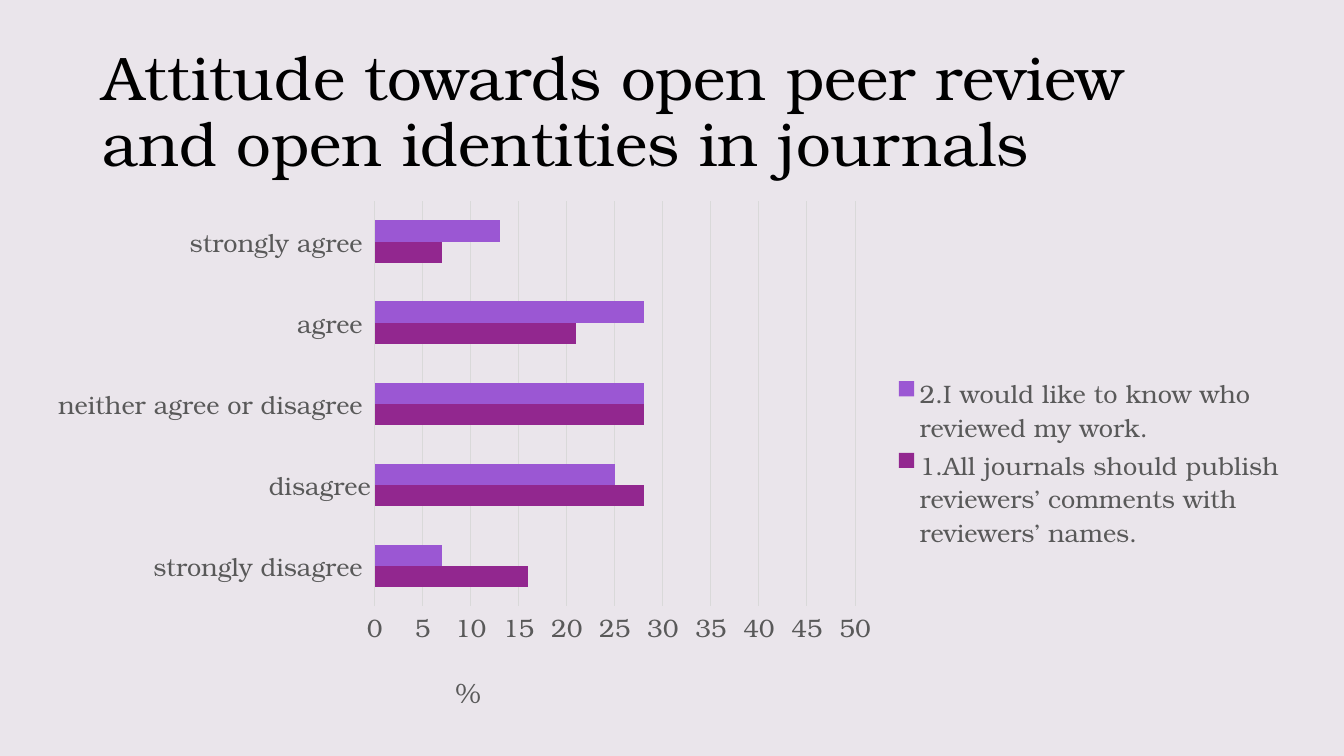
from lxml import etree
from pptx import Presentation
from pptx.chart.data import CategoryChartData
from pptx.dml.color import RGBColor
from pptx.enum.chart import XL_CHART_TYPE, XL_LEGEND_POSITION, XL_TICK_MARK
from pptx.enum.text import MSO_ANCHOR
from pptx.oxml.ns import qn
from pptx.util import Inches, Pt

BAR_CLUSTERED = XL_CHART_TYPE.BAR_CLUSTERED
LEGEND_RIGHT = XL_LEGEND_POSITION.RIGHT
NO_TICK = XL_TICK_MARK.NONE
MIDDLE = MSO_ANCHOR.MIDDLE

BACKGROUND = RGBColor(0xEA, 0xE5, 0xEB)
BLACK = RGBColor(0x00, 0x00, 0x00)
GRAY = RGBColor(0x59, 0x59, 0x59)
GRID = RGBColor(0xD9, 0xD9, 0xD9)
PLUM = RGBColor(0x92, 0x27, 0x8F)
VIOLET = RGBColor(0x9B, 0x57, 0xD3)

CATEGORIES = ["strongly disagree ", "disagree", "neither agree or disagree ",
              " agree ", "strongly agree "]
SERIES = [
    ("1.All journals should publish reviewers’ comments with reviewers’ names.",
     (16, 28, 28, 21, 7), PLUM),
    ("2.I would like to know who reviewed my work.",
     (7, 25, 28, 28, 13), VIOLET),
]


def style_font(font, size, color=GRAY, name="TeX Gyre Bonum"):
    font.name = name
    font.size = Pt(size)
    font.bold = False
    font.color.rgb = color


def write_text(tf, text, size=18, color=GRAY, spacing=None):
    p = tf.paragraphs[0]
    if spacing:
        p.line_spacing = spacing
    r = p.add_run()
    r.text = text
    style_font(r.font, size, color)


def style_line(line, color=GRID, width=0.75):
    line.color.rgb = color
    line.width = Pt(width)


def place(element, index, inner=False, **box):
    for old in element.findall(qn("c:layout")):
        element.remove(old)
    layout = etree.Element(qn("c:layout"))
    manual = etree.SubElement(layout, qn("c:manualLayout"))
    if inner:
        etree.SubElement(manual, qn("c:layoutTarget")).set("val", "inner")
    for mode in ("xMode", "yMode"):
        etree.SubElement(manual, qn(f"c:{mode}")).set("val", "edge")
    for key, value in box.items():
        etree.SubElement(manual, qn(f"c:{key}")).set("val", str(value))
    element.insert(index, layout)


class SlideBuilder:
    def __init__(self, prs):
        self.s = prs.slides.add_slide(prs.slide_layouts[6])
        fill = self.s.background.fill
        fill.solid()
        fill.fore_color.rgb = BACKGROUND

    def title(self, text, left, top, width, height):
        sp = self.s.shapes.add_textbox(
            Inches(left), Inches(top), Inches(width), Inches(height))
        tf = sp.text_frame
        tf.word_wrap = True
        tf.vertical_anchor = MIDDLE
        write_text(tf, text, size=44, color=BLACK, spacing=0.9)

    def bar_chart(self, left, top, width, height):
        data = CategoryChartData()
        data.categories = CATEGORIES
        for name, values, _ in SERIES:
            data.add_series(name, values)
        chart = self.s.shapes.add_chart(
            BAR_CLUSTERED, Inches(left), Inches(top),
            Inches(width), Inches(height), data).chart
        style_font(chart.font, 10, BLACK)
        chart.has_title = False

        plot = chart.plots[0]
        plot.gap_width = 182
        plot.overlap = 0
        plot.vary_by_categories = False
        for series, (_, _, color) in zip(plot.series, SERIES):
            series.format.fill.solid()
            series.format.fill.fore_color.rgb = color

        for axis in (chart.category_axis, chart.value_axis):
            axis.major_tick_mark = axis.minor_tick_mark = NO_TICK
            style_font(axis.tick_labels.font, 18)
        chart.category_axis.has_major_gridlines = False
        style_line(chart.category_axis.format.line)

        percent = chart.value_axis
        percent.minimum_scale = 0
        percent.maximum_scale = 50
        percent.major_unit = 5
        percent.format.line.fill.background()
        percent.has_major_gridlines = True
        style_line(percent.major_gridlines.format.line)
        percent.has_title = True
        write_text(percent.axis_title.text_frame, "%", size=20)

        chart.has_legend = True
        chart.legend.position = LEGEND_RIGHT
        chart.legend.include_in_layout = False
        style_font(chart.legend.font, 18)

        root = chart.element
        place(root.find(".//" + qn("c:plotArea")), 0, inner=True,
              x=0.27, y=0.02, w=0.38, h=0.76)
        place(root.find(".//" + qn("c:valAx") + "/" + qn("c:title")), 1,
              x=0.33, y=0.89)
        place(root.find(".//" + qn("c:legend")), 1,
              x=0.68, y=0.34, w=0.31, h=0.34)


def main():
    prs = Presentation()
    prs.slide_width = Inches(13.33)
    prs.slide_height = Inches(7.5)
    slide = SlideBuilder(prs)
    slide.title("Attitude towards open peer review and open identities in journals",
                0.92, 0.4, 11.5, 1.45)
    slide.bar_chart(0.33, 1.89, 12.54, 5.29)
    prs.save("out.pptx")


if __name__ == "__main__":
    main()
